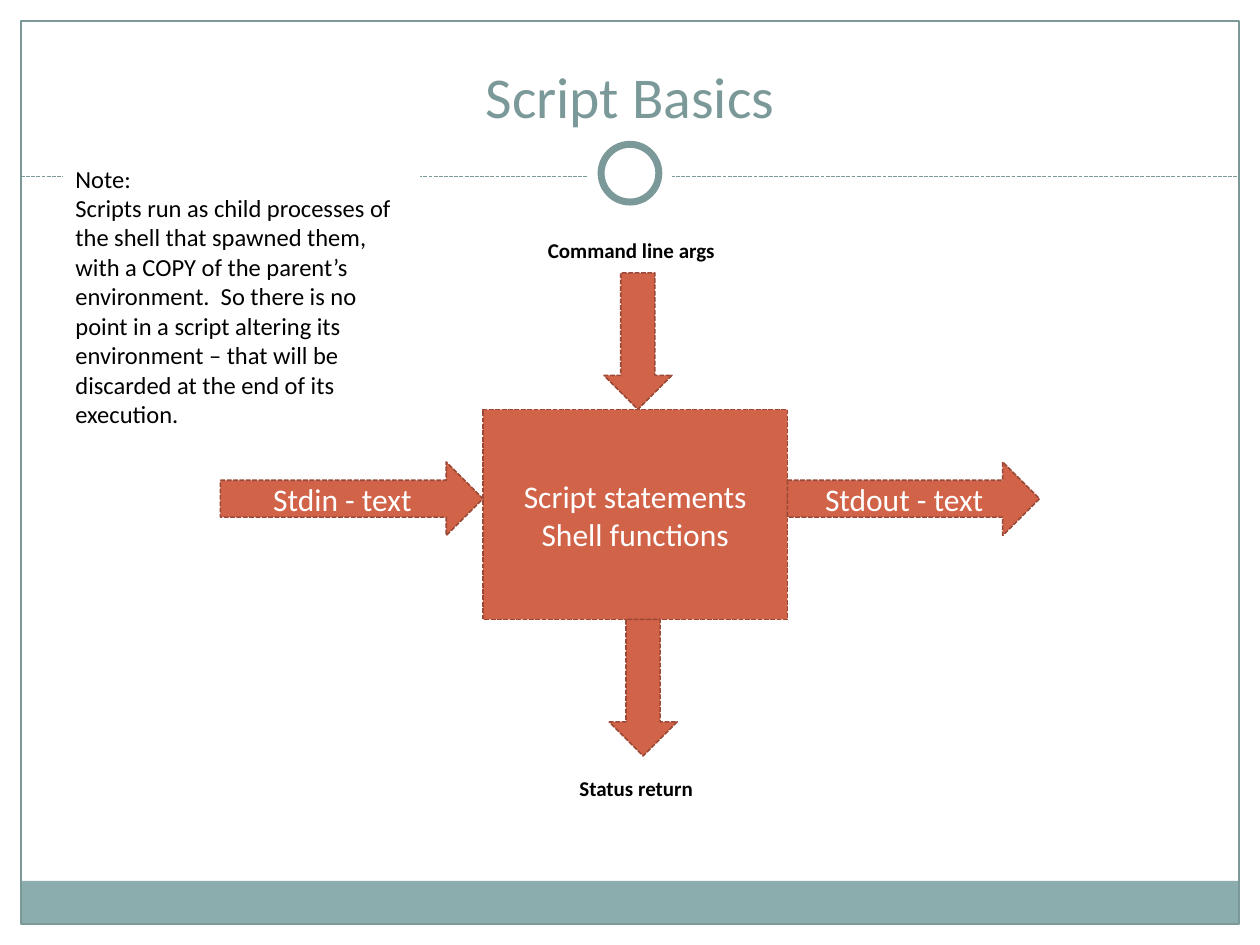
"""Build the Script Basics slide on a grid of 120 columns by 90 rows."""
import pptx
import pptx.util
import pptx.dml.color
import pptx.enum.dml
import pptx.enum.shapes
import pptx.enum.text
import pptx.oxml.ns
import lxml.etree

COLS, ROWS = 120, 90
HUES = {"teal": "7C999A", "band": "8CADAE", "rust": "D16349",
        "edge": "9B4936", "white": "FFFFFF", "black": "000000"}
KIND = pptx.enum.shapes.MSO_SHAPE
SIDE = pptx.enum.text.PP_ALIGN
HOLD = pptx.enum.text.MSO_ANCHOR
FIT = pptx.enum.text.MSO_AUTO_SIZE


def hue(name):
    return pptx.dml.color.RGBColor.from_string(HUES[name])


def write(shape, text, size=18, color="white", bold=False,
          side=SIDE.CENTER, hold=HOLD.MIDDLE, fit=FIT.NONE):
    frame = shape.text_frame
    frame.word_wrap = True
    frame.auto_size = fit
    frame.vertical_anchor = hold
    frame.text = text
    for para in frame.paragraphs:
        para.alignment = side
        font = para.runs[0].font
        font.name, font.bold = "Calibri", bold
        font.size = pptx.util.Pt(size)
        font.color.rgb = hue(color)


class Deck:
    def __init__(self):
        self.show = pptx.Presentation()
        self.show.slide_width = pptx.util.Inches(10)
        self.show.slide_height = pptx.util.Inches(7.5)
        self.slide = self.show.slides.add_slide(self.show.slide_layouts[5])
        self.note = dict(color="black", side=SIDE.LEFT, hold=HOLD.TOP,
                         fit=FIT.SHAPE_TO_FIT_TEXT)

    def place(self, col, row, wide=0, high=0):
        across = self.show.slide_width / COLS
        down = self.show.slide_height / ROWS
        return (round(col * across), round(row * down),
                round(wide * across), round(high * down))

    def stroke(self, line, color, width, dash):
        line.color.rgb = hue(color)
        line.width = pptx.util.Pt(width)
        if dash:
            line.dash_style = pptx.enum.dml.MSO_LINE.SQUARE_DOT

    def title(self, text, *box):
        head = self.slide.shapes.title
        head.left, head.top, head.width, head.height = self.place(*box)
        write(head, text, size=33, color="teal", hold=HOLD.BOTTOM)

    def shape(self, kind, *box, fill=None, line=None, width=0.75, dash=False):
        item = self.slide.shapes.add_shape(kind, *self.place(*box))
        item.shadow.inherit = False
        if fill:
            item.fill.solid()
            item.fill.fore_color.rgb = hue(fill)
        else:
            item.fill.background()
        if line:
            self.stroke(item.line, line, width, dash)
        else:
            item.line.fill.background()
        return item

    def block(self, kind, *box, text=""):
        item = self.shape(kind, *box, fill="rust", line="edge",
                          width=0.9, dash=True)
        if text:
            write(item, text)

    def rule(self, left, right, row):
        start, end = self.place(left, row), self.place(right, row)
        line = self.slide.shapes.add_connector(
            pptx.enum.shapes.MSO_CONNECTOR.STRAIGHT, *start[:2], *end[:2])
        self.stroke(line.line, "teal", 0.75, True)
        lxml.etree.SubElement(line._element.spPr,
                              pptx.oxml.ns.qn("a:effectLst"))

    def label(self, text, *box):
        item = self.slide.shapes.add_textbox(*self.place(*box))
        write(item, text, size=12, bold=True, **self.note)

    def panel(self, text, *box):
        item = self.shape(KIND.RECTANGLE, *box, fill="white")
        write(item, text, size=14, **self.note)


def main():
    deck = Deck()
    deck.title("Script Basics", 4, 3, 112, 10)
    deck.shape(KIND.RECTANGLE, 2, 83.9, 116, 4.1, fill="band")
    deck.shape(KIND.RECTANGLE, 2, 2, 116, 86, line="teal")
    deck.rule(2, 118, 16.8)
    deck.shape(KIND.OVAL, 56, 12.5, 8, 8, fill="white")
    deck.shape(KIND.OVAL, 57.25, 13.75, 5.5, 5.5,
               fill="white", line="teal", width=4)

    deck.block(KIND.RECTANGLE, 46, 39, 29, 20,
               text="Script statements\nShell functions")
    deck.block(KIND.RIGHT_ARROW, 75, 44, 24, 7, text="Stdout - text")
    deck.block(KIND.RIGHT_ARROW, 21, 44, 25, 7, text="Stdin - text")
    deck.block(KIND.DOWN_ARROW, 57.5, 26, 6.5, 13)
    deck.block(KIND.DOWN_ARROW, 58, 59, 6.5, 13)

    deck.label("Command line args", 51, 22, 19, 3.6)
    deck.label("Status return", 54, 73.3, 19, 3.6)
    deck.panel("Note:\nScripts run as child processes of the shell that "
               "spawned them, with a COPY of the parent’s environment.  "
               "So there is no point in a script altering its environment "
               "– that will be discarded at the end of its execution.",
               6, 15, 34, 26.6)
    deck.show.save("out.pptx")


if __name__ == "__main__":
    main()
